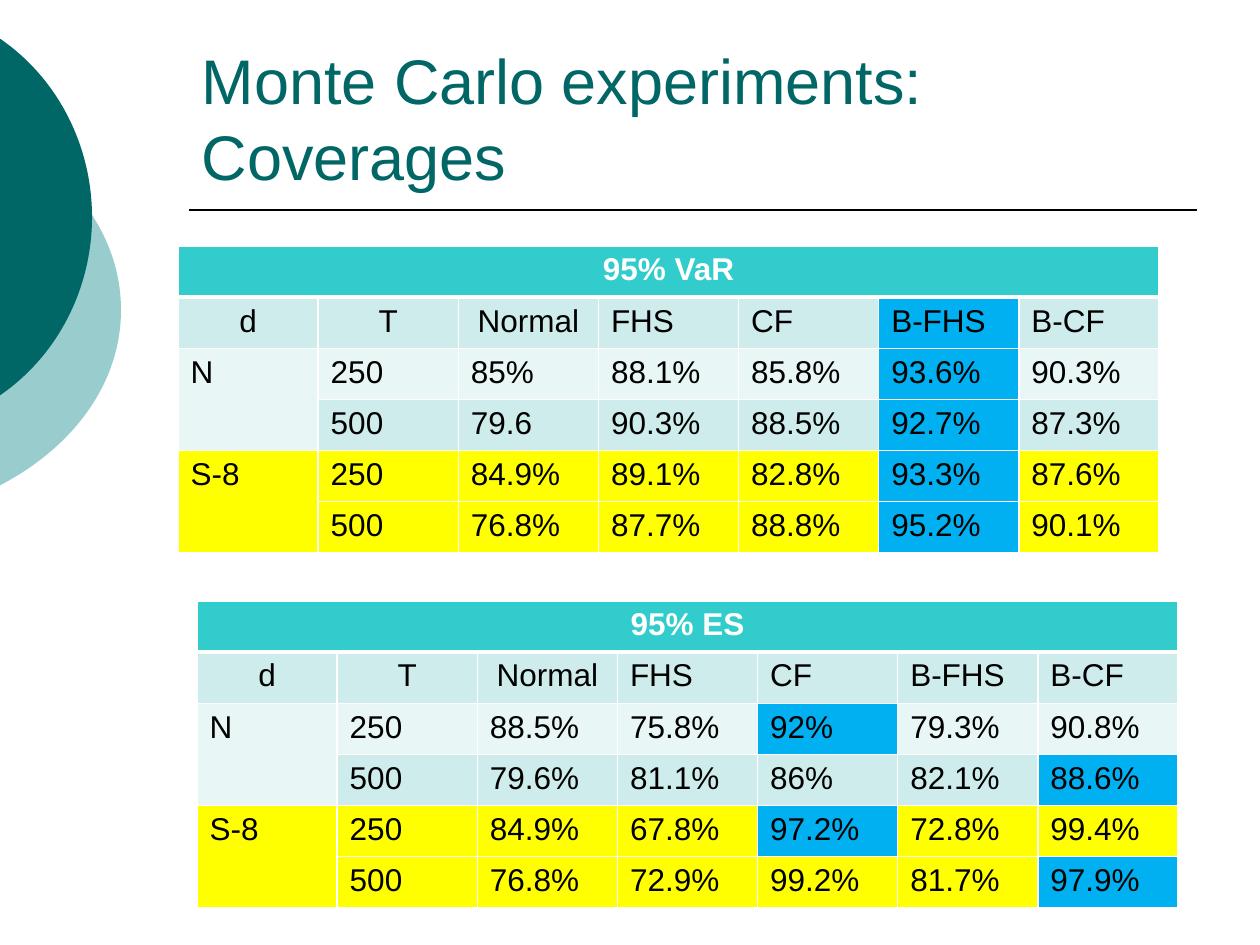
from lxml.etree import SubElement
from pptx import Presentation
from pptx.dml.color import RGBColor
from pptx.enum.shapes import MSO_CONNECTOR
from pptx.enum.text import MSO_ANCHOR, PP_ALIGN
from pptx.oxml.ns import qn
from pptx.util import Emu, Pt

SCALE = 914400 / 126
FONT = "Arial"
TEAL = RGBColor(0x00, 0x66, 0x66)
PALE_TEAL = RGBColor(0x99, 0xCC, 0xCC)
TURQUOISE = RGBColor(0x33, 0xCC, 0xCC)
BAND_DARK = RGBColor(0xCE, 0xEC, 0xEC)
BAND_LIGHT = RGBColor(0xE8, 0xF6, 0xF6)
YELLOW = RGBColor(0xFF, 0xFF, 0x00)
BLUE = RGBColor(0x00, 0xB0, 0xF0)
BLACK = RGBColor(0x00, 0x00, 0x00)
WHITE = RGBColor(0xFF, 0xFF, 0xFF)

TABLE_WIDTH, TABLE_HEIGHT = 981, 307
ROW_FILLS = [TURQUOISE, BAND_DARK, BAND_LIGHT, BAND_DARK, YELLOW, YELLOW]
HEADINGS = ["d", "T", "Normal", "FHS", "CF", "B-FHS", "B-CF"]
VAR_ROWS = [
    ["N", "250", "85%", "88.1%", "85.8%", "93.6%", "90.3%"],
    ["", "500", "79.6", "90.3%", "88.5%", "92.7%", "87.3%"],
    ["S-8", "250", "84.9%", "89.1%", "82.8%", "93.3%", "87.6%"],
    ["", "500", "76.8%", "87.7%", "88.8%", "95.2%", "90.1%"],
]
ES_ROWS = [
    ["N", "250", "88.5%", "75.8%", "92%", "79.3%", "90.8%"],
    ["", "500", "79.6%", "81.1%", "86%", "82.1%", "88.6%"],
    ["S-8", "250", "84.9%", "67.8%", "97.2%", "72.8%", "99.4%"],
    ["", "500", "76.8%", "72.9%", "99.2%", "81.7%", "97.9%"],
]
VAR_BEST = {(row, 5) for row in range(1, 6)}
ES_BEST = {(2, 4), (3, 6), (4, 4), (5, 6)}


def px(length):
    """Turn pixels into EMU."""
    return Emu(round(length * SCALE))


def format_runs(paragraph, size, color, bold=False):
    """Set the font of every run in a paragraph."""
    for run in paragraph.runs:
        run.font.name = FONT
        run.font.size = Pt(size)
        run.font.bold = bold
        run.font.color.rgb = color


def add_title(slide, text):
    """Place and format the title."""
    title = slide.shapes.title
    title.left, title.top, title.width, title.height = px(189), px(42), px(1008), px(157)
    title.text_frame.text = text
    title.text_frame.word_wrap = True
    title.text_frame.vertical_anchor = MSO_ANCHOR.BOTTOM
    paragraph = title.text_frame.paragraphs[0]
    paragraph.alignment = PP_ALIGN.LEFT
    format_runs(paragraph, 36, TEAL)


def add_path_step(path, tag, points):
    """Append one drawing step to a path."""
    step = SubElement(path, qn(f"a:{tag}"))
    for x, y in points:
        SubElement(step, qn("a:pt"), x=str(px(x)), y=str(px(y)))


def add_disc_edge(slide, frame, curve, color):
    """Draw a disc cut by the left slide edge from its upper Bezier curve."""
    left, top, width, height = frame
    upper = [(x - left, y - top) for x, y in curve]
    middle = upper[-1][1]
    lower = [(x, 2 * middle - y) for x, y in reversed(upper[:-1])]
    builder = slide.shapes.build_freeform(0, 0)
    builder.add_line_segments([(px(width), px(height))])
    shape = builder.convert_to_shape()
    shape.left, shape.top, shape.width, shape.height = map(px, frame)
    path = shape._element.spPr.find(".//" + qn("a:path"))
    for step in list(path):
        path.remove(step)
    path.set("w", str(px(width)))
    path.set("h", str(px(height)))
    add_path_step(path, "moveTo", upper[:1])
    add_path_step(path, "cubicBezTo", upper[1:])
    add_path_step(path, "cubicBezTo", lower)
    SubElement(path, qn("a:close"))
    shape.shadow.inherit = False
    shape.fill.solid()
    shape.fill.fore_color.rgb = color
    shape.line.fill.background()


def add_rule(slide):
    """Draw the line below the title."""
    rule = slide.shapes.add_connector(MSO_CONNECTOR.STRAIGHT, px(189), px(210), px(1197), px(210))
    rule.line.color.rgb = BLACK
    rule.line.width = Pt(1)
    SubElement(rule._element.spPr, qn("a:effectLst"))


def set_borders(cell, row):
    """Give a cell white borders, thick between the first two rows."""
    properties = cell._tc.get_or_add_tcPr()
    for side in "LRTB":
        thick = (row, side) in {(0, "B"), (1, "T")}
        line = SubElement(properties, qn(f"a:ln{side}"), w=str(Pt(3 if thick else 1)))
        fill = SubElement(line, qn("a:solidFill"))
        SubElement(fill, qn("a:srgbClr"), val=str(WHITE))


def add_coverage_table(slide, left, top, heading, data, best):
    """Add a coverage table with its best cells highlighted."""
    rows = [[heading] + [""] * (len(HEADINGS) - 1), HEADINGS] + data
    table = slide.shapes.add_table(
        len(rows), len(HEADINGS), px(left), px(top), px(TABLE_WIDTH), px(TABLE_HEIGHT)).table
    table.horz_banding = False
    for r, values in enumerate(rows):
        for c, value in enumerate(values):
            cell = table.cell(r, c)
            set_borders(cell, r)
            cell.fill.solid()
            cell.fill.fore_color.rgb = BLUE if (r, c) in best else ROW_FILLS[r]
            cell.text_frame.text = value
            paragraph = cell.text_frame.paragraphs[0]
            centred = r == 0 or (r == 1 and c < 3)
            paragraph.alignment = PP_ALIGN.CENTER if centred else PP_ALIGN.LEFT
            format_runs(paragraph, 18, BLACK if r else WHITE, bold=r == 0)
    table.cell(0, 0).merge(table.cell(0, len(HEADINGS) - 1))
    for r in (2, 4):
        table.cell(r, 0).merge(table.cell(r + 1, 0))


def main():
    """Build the slide and save it."""
    presentation = Presentation()
    presentation.slide_width, presentation.slide_height = px(1260), px(945)
    slide = presentation.slides.add_slide(presentation.slide_layouts[5])
    add_disc_edge(slide, (-446, 94, 567, 431),
                  [(-1, 134), (76, 174), (121, 239), (121, 310)], PALE_TEAL)
    add_disc_edge(slide, (-334, 0, 426, 435),
                  [(-1, 38), (58, 78), (92, 146), (92, 217)], TEAL)
    add_rule(slide)
    add_title(slide, "Monte Carlo experiments: Coverages")
    add_coverage_table(slide, 178, 246, "95% VaR", VAR_ROWS, VAR_BEST)
    add_coverage_table(slide, 197, 601, "95% ES", ES_ROWS, ES_BEST)
    presentation.save("out.pptx")


if __name__ == "__main__":
    main()
